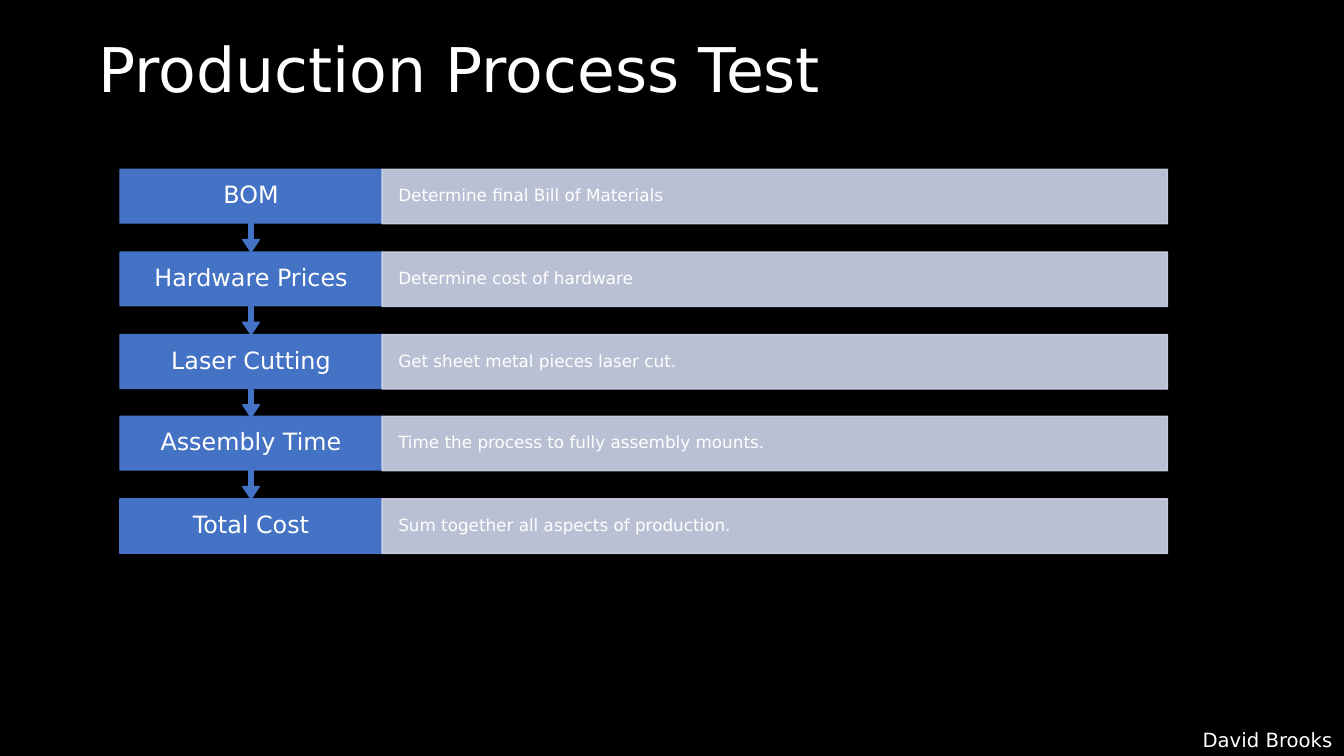
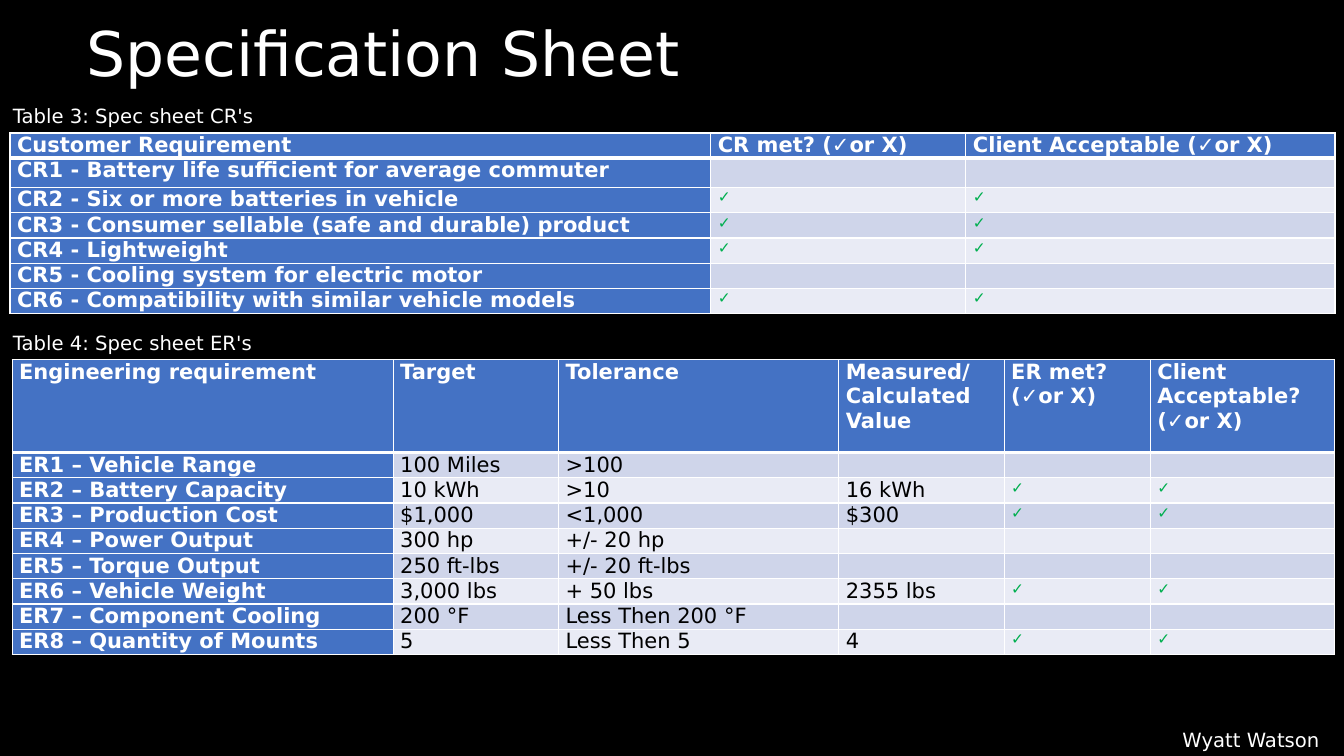
from pptx import Presentation
from pptx import util as u
from pptx.dml.color import RGBColor
from pptx.enum import shapes, text
from pptx.oxml import parse_xml
from pptx.oxml.ns import nsdecls, qn

EMU_PER_PX = 9144  # 100 px to the inch
BLACK = RGBColor(0x00, 0x00, 0x00)
WHITE = RGBColor(0xFF, 0xFF, 0xFF)
BLUE = RGBColor(0x44, 0x72, 0xC4)
PALE_BLUE = RGBColor(0xCF, 0xD5, 0xEA)
PALER_BLUE = RGBColor(0xE9, 0xEB, 0xF5)
GREEN = RGBColor(0x00, 0xAF, 0x4F)
BODY_FONT, TICK_FONT = "DejaVu Sans", "Lato"
TICK = "✓"
CELL_SIZE, TICK_SIZE = 15, 11

STEPS = [
    ("BOM", "Determine final Bill of Materials"),
    ("Hardware Prices", "Determine cost of hardware"),
    ("Laser Cutting", "Get sheet metal pieces laser cut."),
    ("Assembly Time", "Time the process to fully assembly mounts."),
    ("Total Cost", "Sum together all aspects of production."),
]
STEP_TOP, STEP_PITCH, STEP_HEIGHT = 168, 81.75, 54
LABEL_LEFT, LABEL_WIDTH, DETAIL_WIDTH = 119, 260, 779
CALLOUT_HEIGHT = 82
CALLOUT_SHAPE = (0.05, 0.1, 0.15, 0.65)

CUSTOMER_COLUMNS = [695, 253, 366]
CUSTOMER_HEIGHTS = [24, 29] + [24] * 5
CUSTOMER_ROWS = [
    ["Customer Requirement", "CR met? (✓or X)", "Client Acceptable (✓or X)"],
    ["CR1 - Battery life sufficient for average commuter", "", ""],
    ["CR2 - Six or more batteries in vehicle", TICK, TICK],
    ["CR3 - Consumer sellable (safe and durable) product", TICK, TICK],
    ["CR4 - Lightweight", TICK, TICK],
    ["CR5 - Cooling system for electric motor", "", ""],
    ["CR6 - Compatibility with similar vehicle models", TICK, TICK],
]

ENGINEERING_COLUMNS = [378, 164, 278, 164, 145, 183]
ENGINEERING_HEIGHTS = [92] + [24] * 8
ENGINEERING_ROWS = [
    ["Engineering requirement", "Target", "Tolerance",
     "Measured/ Calculated Value", "ER met? (✓or X)",
     "Client Acceptable? (✓or X)"],
    ["ER1 – Vehicle Range", "100 Miles", ">100", "", "", ""],
    ["ER2 – Battery Capacity", "10 kWh", ">10", "16 kWh", TICK, TICK],
    ["ER3 – Production Cost", "$1,000", "<1,000", "$300", TICK, TICK],
    ["ER4 – Power Output", "300 hp", "+/- 20 hp", "", "", ""],
    ["ER5 – Torque Output", "250 ft-lbs", "+/- 20 ft-lbs", "", "", ""],
    ["ER6 – Vehicle Weight", "3,000 lbs", "+ 50 lbs", "2355 lbs", TICK, TICK],
    ["ER7 – Component Cooling", "200 °F", "Less Then 200 °F", "", "", ""],
    ["ER8 – Quantity of Mounts", "5", "Less Then 5", "4", TICK, TICK],
]


def px(length):
    return u.Emu(round(length * EMU_PER_PX))


def write(frame, words, size=14, color=WHITE, font=BODY_FONT, bold=False,
          align=text.PP_ALIGN.LEFT, spacing=1.0):
    para = frame.paragraphs[0]
    para.alignment = align
    para.line_spacing = spacing
    span = para.add_run()
    span.text = words
    span.font.size = u.Pt(size)
    span.font.name = font
    span.font.bold = bold
    span.font.color.rgb = color


def set_margins(holder, across, down):
    holder.margin_left = holder.margin_right = px(across)
    holder.margin_top = holder.margin_bottom = px(down)


def set_opacity(shape, percent):
    """Apply one opacity to both the fill and the outline."""
    for color in shape._element.spPr.iter(qn("a:srgbClr")):
        color.append(parse_xml(
            f'<a:alpha {nsdecls("a")} val="{percent * 1000}"/>'))


def set_borders(cell, **widths):
    """Draw white borders; widths are points for L, R, T and B."""
    properties = cell._tc.get_or_add_tcPr()
    for side in "LRTB":
        properties.append(parse_xml(
            f'<a:ln{side} {nsdecls("a")} w="{u.Pt(widths.get(side, 1))}">'
            f'<a:solidFill><a:srgbClr val="{WHITE}"/></a:solidFill>'
            f'</a:ln{side}>'))


class SlideBuilder:
    def __init__(self):
        self.deck = Presentation()
        self.deck.slide_width, self.deck.slide_height = px(1333), px(750)
        self.slide = None

    def new_slide(self, title, title_left, title_top, author, author_left):
        self.slide = self.deck.slides.add_slide(self.deck.slide_layouts[6])
        fill = self.slide.background.fill
        fill.solid()
        fill.fore_color.rgb = BLACK
        self.text_box(title, title_left, title_top, 1000, 138,
                      size=44, spacing=0.9)
        self.text_box(author, author_left, 717, 1333 - author_left, 34)

    def text_box(self, words, left, top, width, height, **style):
        box = self.slide.shapes.add_textbox(
            px(left), px(top), px(width), px(height))
        box.text_frame.word_wrap = True
        write(box.text_frame, words, **style)

    def block(self, kind, words, color, left, top, width, height, margins,
              **style):
        box = self.slide.shapes.add_shape(
            kind, px(left), px(top), px(width), px(height))
        box.shadow.inherit = False
        box.fill.solid()
        box.fill.fore_color.rgb = color
        box.line.color.rgb = color
        box.line.width = u.Pt(1)
        frame = box.text_frame
        frame.word_wrap = True
        frame.vertical_anchor = text.MSO_ANCHOR.MIDDLE
        set_margins(frame, *margins)
        write(frame, words, spacing=0.9, **style)
        return box

    def step(self, label, detail, top, is_last):
        """A label, with an arrow to the next step, beside its detail."""
        kinds = shapes.MSO_SHAPE
        kind = kinds.RECTANGLE if is_last else kinds.DOWN_ARROW_CALLOUT
        height = STEP_HEIGHT if is_last else CALLOUT_HEIGHT
        box = self.block(kind, label, BLUE, LABEL_LEFT, top, LABEL_WIDTH,
                         height, (18, 13), size=17,
                         align=text.PP_ALIGN.CENTER)
        if not is_last:
            for index, value in enumerate(CALLOUT_SHAPE):
                box.adjustments[index] = value
        panel = self.block(kinds.RECTANGLE, detail, PALE_BLUE,
                           LABEL_LEFT + LABEL_WIDTH, top, DETAIL_WIDTH,
                           STEP_HEIGHT, (16, 17), size=12)
        set_opacity(panel, 90)

    def table(self, rows, columns, heights, left, top):
        frame = self.slide.shapes.add_table(
            len(rows), len(columns), px(left), px(top),
            px(sum(columns)), px(sum(heights)))
        grid = frame.table
        grid.first_row = grid.horz_banding = False
        for column, width in zip(grid.columns, columns):
            column.width = px(width)
        for row, height in zip(grid.rows, heights):
            row.height = px(height)
        for r, row in enumerate(rows):
            for c, words in enumerate(row):
                self.cell(grid.cell(r, c), words, r, c)

    def cell(self, cell, words, r, c):
        is_header = r == 0 or c == 0
        set_margins(cell, 7, 0)
        set_borders(cell, T=3 if r == 1 else 1, B=3 if r == 0 else 1)
        cell.fill.solid()
        band = PALE_BLUE if r % 2 else PALER_BLUE
        cell.fill.fore_color.rgb = BLUE if is_header else band
        if is_header:
            write(cell.text_frame, words, size=CELL_SIZE, bold=True)
        elif words == TICK:
            write(cell.text_frame, words, size=TICK_SIZE, color=GREEN,
                  font=TICK_FONT)
        elif words:
            write(cell.text_frame, words, size=CELL_SIZE, color=BLACK)
        else:  # keeps an empty cell from stretching its row
            cell.text_frame.paragraphs[0]._p.append(parse_xml(
                f'<a:endParaRPr {nsdecls("a")} sz="{TICK_SIZE * 100}"/>'))


def main():
    builder = SlideBuilder()

    builder.new_slide("Production Process Test", 88, 34, "David Brooks", 1183)
    for index, (label, detail) in enumerate(STEPS):
        builder.step(label, detail, round(STEP_TOP + index * STEP_PITCH),
                     is_last=index == len(STEPS) - 1)

    builder.new_slide("Specification Sheet", 76, 18, "Wyatt Watson", 1163)
    builder.text_box("Table 3: Spec sheet CR's", 3, 98, 524, 34)
    builder.table(CUSTOMER_ROWS, CUSTOMER_COLUMNS, CUSTOMER_HEIGHTS, 10, 132)
    builder.text_box("Table 4: Spec sheet ER's", 3, 323, 524, 34)
    builder.table(ENGINEERING_ROWS, ENGINEERING_COLUMNS, ENGINEERING_HEIGHTS,
                  12, 357)

    builder.deck.save("out.pptx")


if __name__ == "__main__":
    main()
